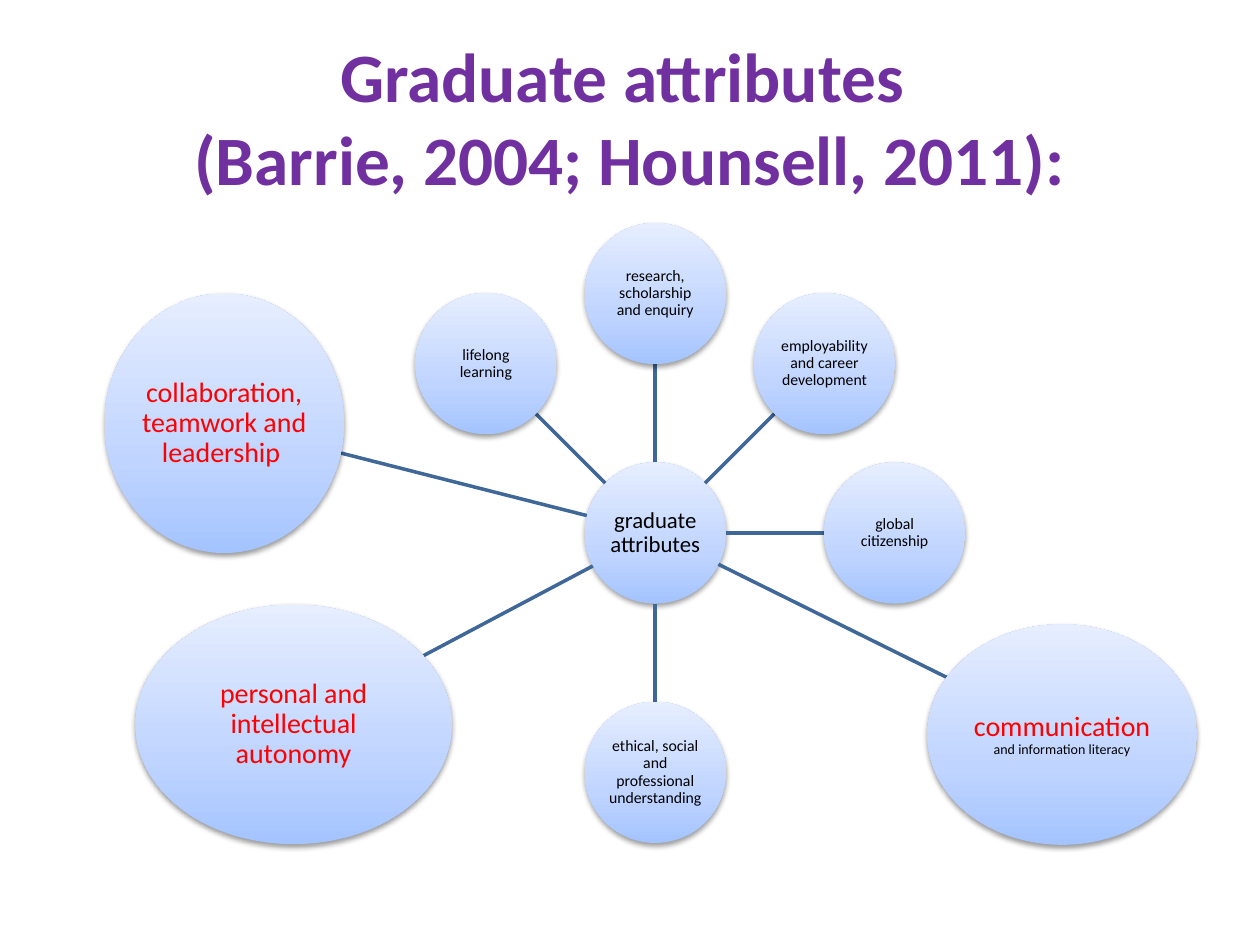
from math import hypot

from lxml.etree import SubElement
from pptx import Presentation
from pptx.dml.color import RGBColor as RGB
from pptx.enum.shapes import MSO_CONNECTOR as LINK, MSO_SHAPE as SHAPE
from pptx.enum.text import MSO_ANCHOR as ANCHOR, MSO_AUTO_SIZE as FIT, PP_ALIGN as ALIGN
from pptx.oxml import parse_xml
from pptx.oxml.ns import nsdecls, qn
from pptx.util import Inches, Pt

# Content
COLORS = {"title": "7030A0", "text": "000000", "key": "FF0000", "line": "3F6797",
          "low": "A4C4FF", "mid": "BFD4FF", "high": "E6EEFF"}
TITLE = ["Graduate attributes ", "\n", "(Barrie, 2004; Hounsell, 2011):"]
HUB = (5.2, 4.23)
DIAM = 1.12
RING = 1.9                     # hub centre to small circle centre
DIAG = RING * 0.5 ** 0.5

# Runs are (words, size, colour); centres are offsets from the hub
SMALL = [
    ("research, scholarship and enquiry", (0, -RING)),
    ("employability and career development", (DIAG, -DIAG)),
    ("global citizenship", (RING, 0)),
    ("ethical, social and professional understanding", (0, RING)),
    ("lifelong learning", (-DIAG, -DIAG)),
]
LARGE = [
    ([("communication ", 16, "key"), ("and information literacy", 8, "text")],
     (3.23, 1.6), (2.14, 1.75)),
    ([("personal and intellectual autonomy", 16, "key")], (-2.87, 1.52), (2.51, 1.9)),
    ([("collaboration, teamwork and leadership ", 16, "key")], (-3.42, -0.87), (1.9, 2.06)),
]
NODES = [([(words, 9, "text")], spot, (DIAM, DIAM)) for words, spot in SMALL] + LARGE


def write(frame, runs, bold=False, inset=None, space=None):
    frame.word_wrap = True
    frame.auto_size = FIT.NONE
    frame.vertical_anchor = ANCHOR.MIDDLE
    if inset is not None:
        frame.margin_left = frame.margin_right = Inches(inset)
        frame.margin_top = frame.margin_bottom = Inches(inset)
    para = frame.paragraphs[0]
    para.alignment = ALIGN.CENTER
    para.line_spacing = space
    for words, size, color in runs:
        if words == "\n":
            para.add_line_break()
            continue
        run = para.add_run()
        run.text = words
        font = run.font
        font.name, font.size, font.bold = "Calibri", Pt(size), bold
        font.color.rgb = RGB.from_string(COLORS[color])


def bubble(slide, runs, mid, size):
    (x, y), (w, h) = mid, size
    shape = slide.shapes.add_shape(SHAPE.OVAL, Inches(x - w / 2), Inches(y - h / 2),
                                   Inches(w), Inches(h))
    shape.line.fill.background()
    shape.shadow.inherit = False
    props = shape._element.spPr
    # Gradient from bottom to top
    stops = "".join(f'<a:gs pos="{pos * 1000}"><a:srgbClr val="{COLORS[name]}"/></a:gs>'
                    for pos, name in ((0, "low"), (35, "mid"), (100, "high")))
    props.insert(2, parse_xml(
        f'<a:gradFill {nsdecls("a")} rotWithShape="1"><a:gsLst>{stops}</a:gsLst>'
        '<a:lin ang="16200000" scaled="0"/></a:gradFill>'))
    # Soft shadow below
    props.find(qn("a:effectLst")).append(parse_xml(
        f'<a:outerShdw {nsdecls("a")} blurRad="40000" dist="20000" dir="5400000" '
        'rotWithShape="0"><a:srgbClr val="000000"><a:alpha val="38000"/></a:srgbClr>'
        '</a:outerShdw>'))
    write(shape.text_frame, runs, inset=0.01, space=0.9)


def spoke(slide, spot, size):
    """Line between the facing edges of the hub and a node."""
    dx, dy = spot
    w, h = size
    start = DIAM / 2 / hypot(dx, dy)
    end = 1 - 1 / hypot(dx / (w / 2), dy / (h / 2))
    ends = [Inches(c + d * t) for t in (start, end) for c, d in zip(HUB, spot)]
    line = slide.shapes.add_connector(LINK.STRAIGHT, *ends)
    line.line.width = Pt(2)
    line.line.color.rgb = RGB.from_string(COLORS["line"])
    SubElement(line._element.spPr, qn("a:effectLst"))


def main():
    deck = Presentation()
    deck.slide_width, deck.slide_height = Inches(10), Inches(7.5)
    slide = deck.slides.add_slide(deck.slide_layouts[5])

    # Title
    title = slide.shapes.title
    title.left, title.top = Inches(0.5), Inches(0.3)
    title.width, title.height = Inches(9), Inches(1.25)
    write(title.text_frame, [(words, 39.6, "title") for words in TITLE], bold=True)

    # Hub, then each spoke with its node
    bubble(slide, [("graduate attributes", 13, "text")], HUB, (DIAM, DIAM))
    for runs, spot, size in NODES:
        spoke(slide, spot, size)
        bubble(slide, runs, (HUB[0] + spot[0], HUB[1] + spot[1]), size)

    deck.save("out.pptx")


if __name__ == "__main__":
    main()
